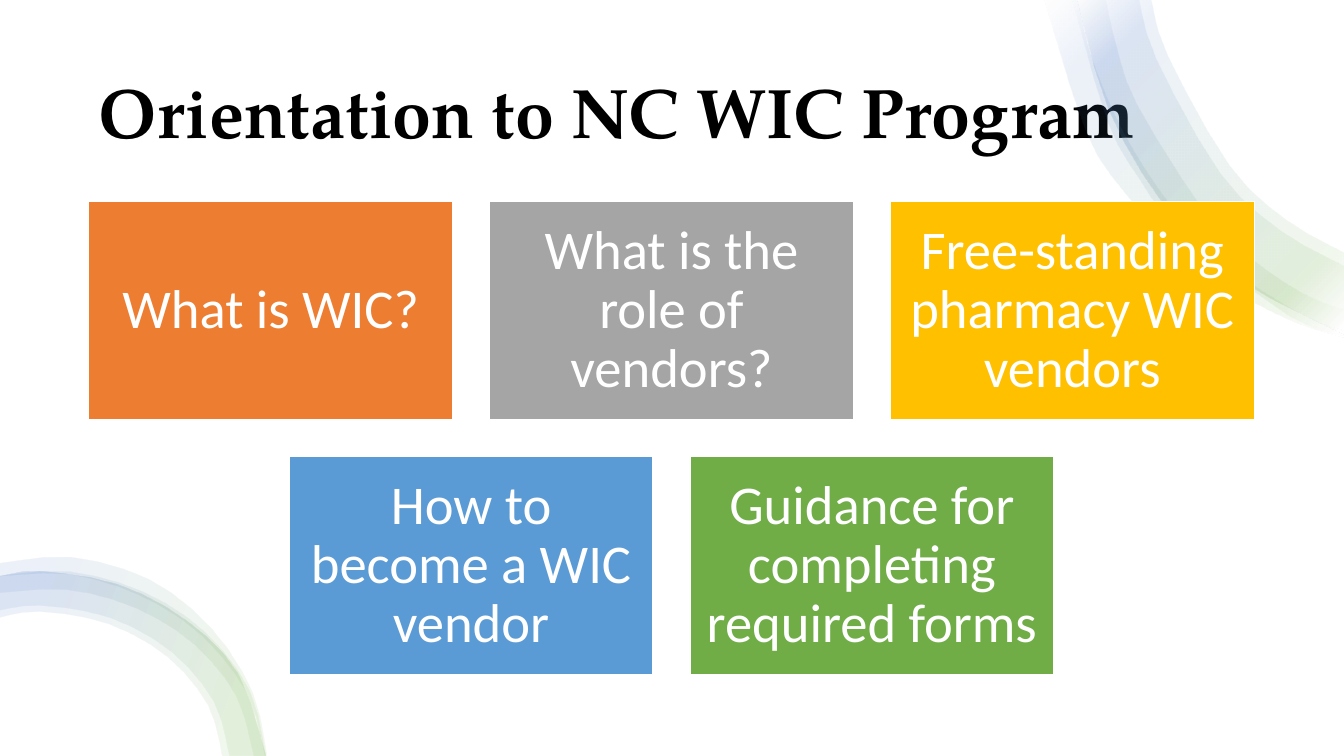
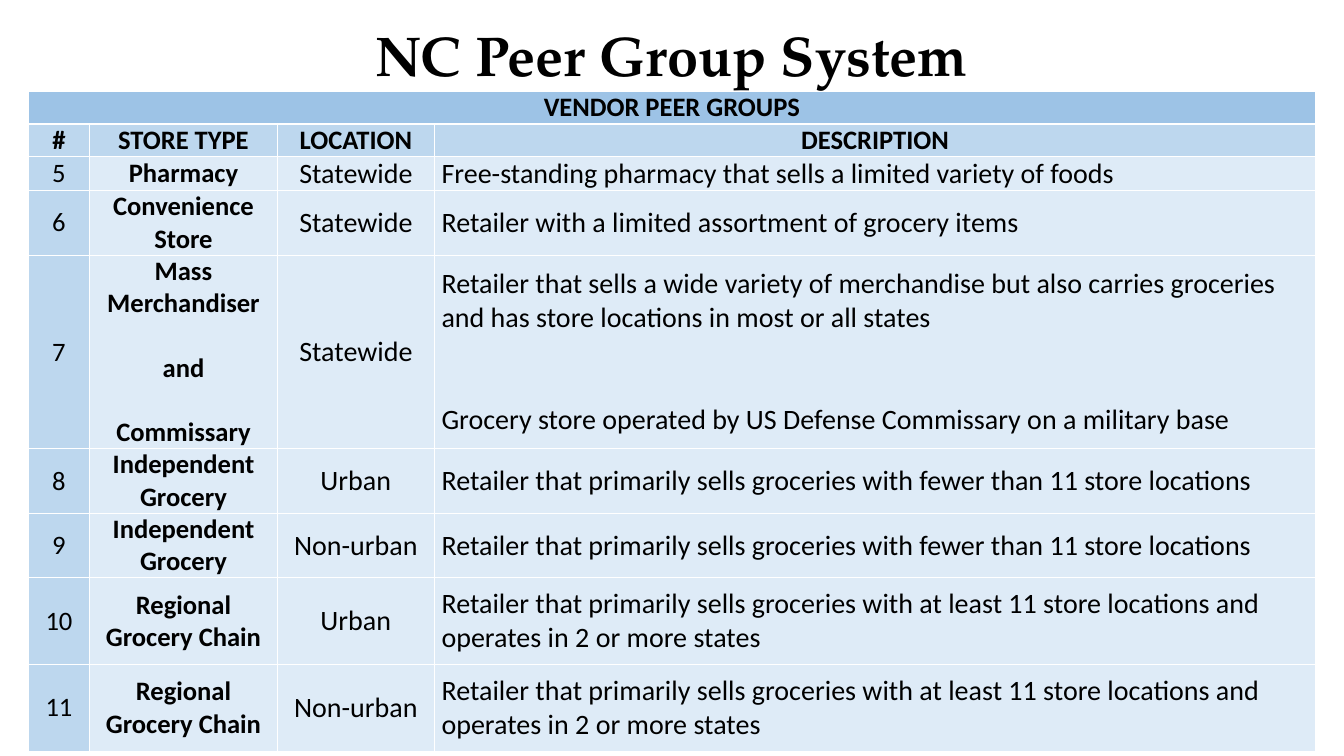
"""Build two slides on the NC WIC vendor program: orientation topics and peer groups."""
from lxml import etree
from pptx import Presentation
from pptx.dml.color import RGBColor
from pptx.enum.shapes import MSO_SHAPE as SHAPE
from pptx.enum.text import MSO_ANCHOR as ANCHOR, PP_ALIGN as ALIGN
from pptx.oxml import parse_xml
from pptx.util import Inches, Pt

BLACK, WHITE = "000000", "FFFFFF"
GREEN, ORANGE, GRAY, GOLD, BLUE = "70AD47", "ED7D31", "A5A5A5", "FFC000", "5B9BD5"
BAND, HEAD, BODY = "9DC3E6", "BDD7EE", "DEEBF7"
TOP_STOPS = [(2, WHITE), (16, GREEN), (85, "4472C4"), (100, WHITE)]
LOW_STOPS = [(0, GREEN), (16, GREEN), (85, "4472C4"), (100, "4472C4")]
NS = "http://schemas.openxmlformats.org/drawingml/2006/main"


def style(p, size, color, bold=False, align=ALIGN.CENTER, name="Calibri"):
    """Format one paragraph."""
    p.alignment = align
    p.font.size, p.font.bold, p.font.name = Pt(size), bold, name
    p.font.color.rgb = RGBColor.from_string(color)


def smooth(pts, steps=3):
    """Return points along a Catmull-Rom curve through pts."""
    ext = [pts[0], *pts, pts[-1]]
    curve = []
    for a, b, c, d in zip(ext, ext[1:], ext[2:], ext[3:]):
        for i in range(steps):
            t = i / steps
            curve.append(tuple(
                (2 * q + (r - p) * t + (2 * p - 5 * q + 4 * r - w) * t ** 2
                 + (3 * q - p - 3 * r + w) * t ** 3) / 2
                for p, q, r, w in zip(a, b, c, d)))
    return curve + [pts[-1]]


prs = Presentation()
prs.slide_width, prs.slide_height = Inches(13.33), Inches(7.5)

slides = []
for text, box, size, align in [
    ("Orientation to NC WIC Program", (0.88, 0.5, 11.57, 1.3), 50, ALIGN.LEFT),
    ("NC Peer Group System", (1.16, -0.17, 11, 1.5), 40, ALIGN.CENTER),
]:
    s = prs.slides.add_slide(prs.slide_layouts[5])
    title = s.shapes.title
    title.left, title.top, title.width, title.height = map(Inches, box)
    tf = title.text_frame
    tf.text, tf.vertical_anchor, tf.word_wrap = text, ANCHOR.MIDDLE, True
    style(tf.paragraphs[0], size, BLACK, True, align, "TeX Gyre Pagella")
    tf.paragraphs[0].line_spacing = 0.9
    slides.append(s)
topics, peers = slides

backdrop = topics.shapes.add_shape(
    SHAPE.RECTANGLE, 0, 0, prs.slide_width, prs.slide_height)
backdrop.shadow.inherit = False
backdrop.fill.solid()
backdrop.fill.fore_color.rgb = RGBColor.from_string(WHITE)
backdrop.line.fill.background()
topics.shapes.title.element.addprevious(backdrop.element)

top_edge = [(10.69, 0), (10.99, 1.07), (11.52, 2), (12.23, 2.74), (13.33, 3.32)]
low_edge = [(0, 5.72), (0.4, 5.67), (1.17, 5.8), (1.85, 6.16), (2.36, 6.69),
            (2.63, 7.5)]
top_ribbons = [
    ([(10.36, 0), (10.77, 1.31), (11.16, 1.92), (11.65, 2.45), (12.21, 2.87),
      (12.82, 3.19), (13.33, 3.35)],
     [(13.33, 3.28), (12.93, 3.13), (12.29, 2.73), (11.8, 2.27), (11.39, 1.73),
      (11.06, 1.15), (10.81, 0.52), (10.69, 0)]),
    (top_edge, [(13.33, 2.51), (12.75, 2.18), (12.19, 1.64), (11.58, 0.55),
                (11.42, 0)]),
    ([(10.64, 0), (10.98, 1.19), (11.31, 1.79), (11.73, 2.33), (12.79, 3.14),
      (13.33, 3.33)],
     [(13.33, 3.08), (12.9, 2.9), (12.39, 2.55), (11.95, 2.11), (11.28, 1.04),
      (11.07, 0.44), (10.97, 0)]),
    (top_edge, [(13.33, 2.64), (12.7, 2.29), (12.1, 1.72), (11.47, 0.59),
                (11.3, 0)]),
]
low_ribbons = [
    (low_edge, [(2.2, 7.5), (2.06, 7), (1.66, 6.52), (1.07, 6.19), (0.4, 6.07),
                (0, 6.13)]),
    (low_edge, [(2.27, 7.5), (2.12, 6.97), (1.7, 6.47), (1.09, 6.13), (0.4, 6.01),
                (0, 6.06)]),
    ([(0, 5.71), (0.69, 5.67), (1.42, 5.87), (2.03, 6.27), (2.47, 6.85), (2.63, 7.5)],
     [(2.51, 7.5), (2.34, 6.91), (1.92, 6.39), (1.34, 6.03), (0.67, 5.85),
      (0, 5.88)]),
    ([(0, 5.59), (0.71, 5.53), (1.48, 5.75), (2.09, 6.23), (2.5, 6.87), (2.64, 7.5)],
     [(2.62, 7.5), (2.45, 6.89), (2, 6.31), (1.39, 5.91), (0.69, 5.7), (0, 5.72)]),
]
for ribbons, angle, colors in [(top_ribbons, 225, TOP_STOPS),
                               (low_ribbons, 200, LOW_STOPS)]:
    stops = "".join(
        f'<a:gs pos="{pos * 1000}"><a:srgbClr val="{color}">'
        f'<a:alpha val="10000"/></a:srgbClr></a:gs>' for pos, color in colors)
    for outer, inner in ribbons:
        outline = [(Inches(x), Inches(y)) for x, y in smooth(outer) + smooth(inner)]
        builder = topics.shapes.build_freeform(*outline[0])
        builder.add_line_segments(outline[1:])
        sp = builder.convert_to_shape()
        sp.shadow.inherit = False
        sp.line.fill.background()
        grad = parse_xml(
            f'<a:gradFill xmlns:a="{NS}" rotWithShape="1"><a:gsLst>{stops}</a:gsLst>'
            f'<a:lin ang="{angle * 60000}" scaled="0"/></a:gradFill>')
        sp.element.spPr.find(etree.QName(NS, "custGeom")).addnext(grad)

box_left, box_right, box_w, box_h = 0.88, 12.44, 3.61, 2.16
step_x = (box_right - box_left - box_w) / 2
box_rows = [
    (box_left, 2, [("What is WIC?", ORANGE), ("What is the role of vendors?", GRAY),
                   ("Free-standing pharmacy WIC vendors", GOLD)]),
    (box_left + step_x / 2, 4.53, [("How to become a WIC vendor", BLUE),
                                   ("Guidance for completing required forms", GREEN)]),
]
for left, top, boxes in box_rows:
    for i, (text, color) in enumerate(boxes):
        sp = topics.shapes.add_shape(
            SHAPE.RECTANGLE, Inches(left + i * step_x), Inches(top),
            Inches(box_w), Inches(box_h))
        sp.shadow.inherit = False
        sp.fill.solid()
        sp.fill.fore_color.rgb = RGBColor.from_string(color)
        sp.line.color.rgb = RGBColor.from_string(WHITE)
        sp.line.width = Pt(1)
        tf = sp.text_frame
        tf.text, tf.word_wrap, tf.vertical_anchor = text, True, ANCHOR.MIDDLE
        tf.margin_left = tf.margin_right = Inches(0.16)
        tf.margin_top = tf.margin_bottom = Inches(0.16)
        style(tf.paragraphs[0], 39, WHITE)
        tf.paragraphs[0].line_spacing = 0.9

few = "Retailer that primarily sells groceries with fewer than 11 store locations"
many = ("Retailer that primarily sells groceries with at least 11 store locations "
        "and operates in 2 or more states")
rows = [
    ("VENDOR PEER GROUPS", "", "", ""),
    ("#", "STORE TYPE", "LOCATION", "DESCRIPTION"),
    ("5", "Pharmacy", "Statewide",
     "Free-standing pharmacy that sells a limited variety of foods"),
    ("6", "Convenience Store", "Statewide",
     "Retailer with a limited assortment of grocery items"),
    ("7", "Mass Merchandiser\nand\nCommissary", "Statewide",
     "Retailer that sells a wide variety of merchandise but also carries groceries "
     "and has store locations in most or all states\n"
     "Grocery store operated by US Defense Commissary on a military base"),
    ("8", "Independent Grocery", "Urban", few),
    ("9", "Independent Grocery", "Non-urban", few),
    ("10", "Regional Grocery Chain", "Urban", many),
    ("11", "Regional Grocery Chain", "Non-urban", many),
]
widths = [0.61, 1.86, 1.56, 8.74]
heights = [0.31, 0.31, 0.33, 0.62, 1.85, 0.62, 0.62, 0.86, 0.86]
table = peers.shapes.add_table(
    len(rows), len(widths), Inches(0.28), Inches(0.91),
    Inches(sum(widths)), Inches(sum(heights))).table
table.first_row = table.horz_banding = False
for col, width in zip(table.columns, widths):
    col.width = Inches(width)
for row, height in zip(table.rows, heights):
    row.height = Inches(height)
table.cell(0, 0).merge(table.cell(0, 3))

for r, texts in enumerate(rows):
    for c, text in enumerate(texts):
        cell = table.cell(r, c)
        cell.fill.solid()
        cell.fill.fore_color.rgb = RGBColor.from_string(
            BAND if r == 0 else HEAD if r == 1 or c == 0 else BODY)
        cell.vertical_anchor = ANCHOR.MIDDLE
        cell.margin_left = cell.margin_right = Inches(0.07)
        cell.margin_top = cell.margin_bottom = 0
        cell.text = text
        heading = r < 2
        size = 20 if c > 1 and not heading else 19
        align = ALIGN.LEFT if c == 3 and not heading else ALIGN.CENTER
        for i, p in enumerate(cell.text_frame.paragraphs):
            style(p, size, BLACK, heading or c == 1, align)
            if i:
                p.space_before = Pt(48 if c == 3 else 23)

prs.save("out.pptx")
